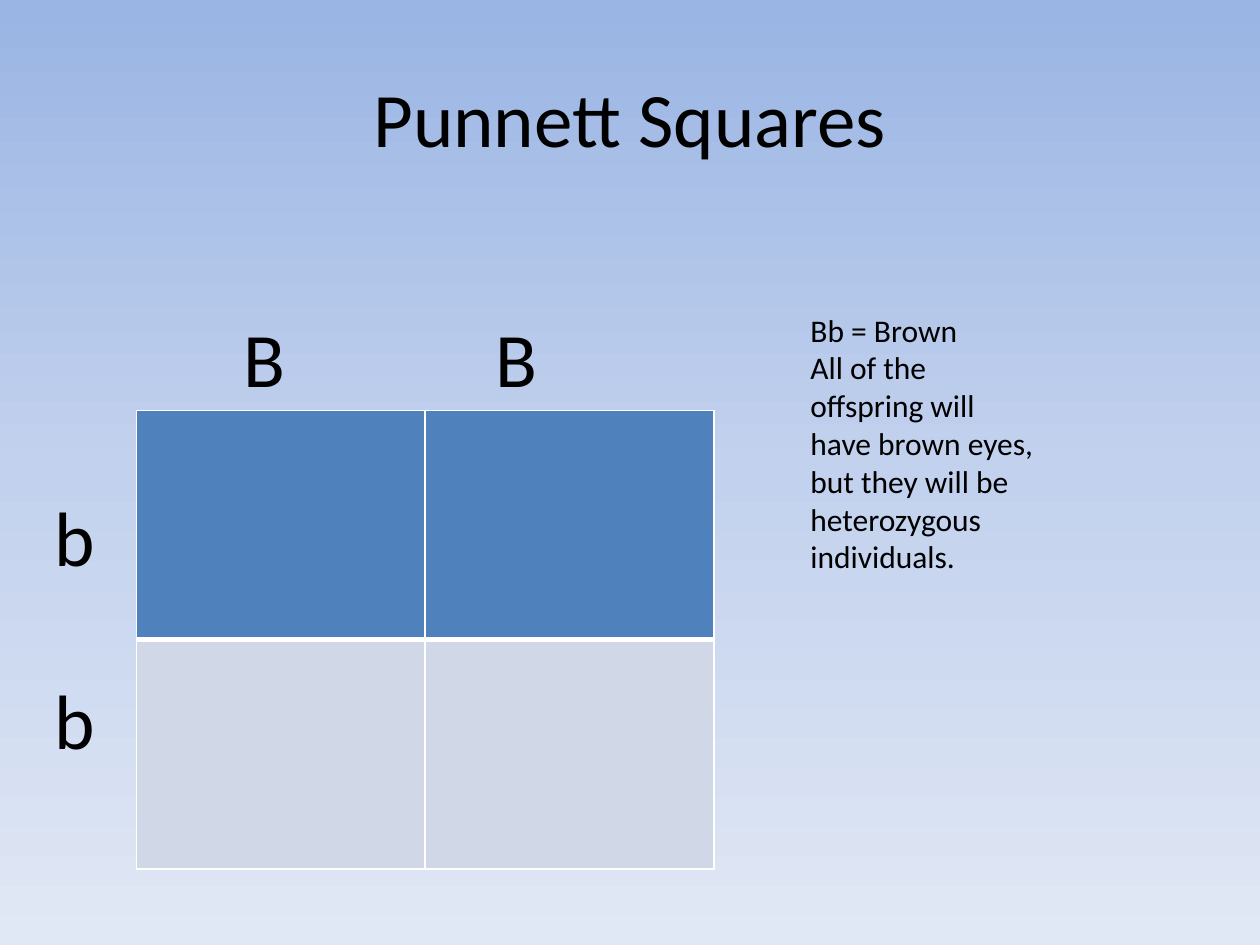
from copy import deepcopy
from typing import NamedTuple

from pptx import Presentation
from pptx.dml.color import RGBColor
from pptx.enum import text
from pptx.oxml import parse_xml
from pptx.oxml.ns import nsdecls, qn
from pptx.util import Pt

FONT = "Calibri"
BLACK, WHITE = "000000", "FFFFFF"
ROW_FILLS = ("4F81BD", "D0D8E8")
BACKGROUND = ((0, "9AB5E4"), (0.5, "C2D1ED"), (1, "E1E8F5"))


class Box(NamedTuple):
    left: float
    top: float
    width: float
    height: float


class Label(NamedTuple):
    box: Box
    lines: tuple[str, ...]
    size: float
    gap: float = 0
    tabs: tuple[float, ...] = ()


LABELS = (
    Label(Box(60, 174, 306, 60.5), ("\tB\t\tB",), 44, tabs=(72, 144, 216)),
    Label(Box(24, 276, 36, 242.5), ("b", "b"), 44, gap=52),
    Label(Box(456, 174, 234, 160),
          ("Bb = Brown", "All of the", "offspring will", "have brown eyes,",
           "but they will be", "heterozygous", "individuals."), 18),
)


def rgb(value: str) -> RGBColor:
    return RGBColor.from_string(value)


def points(box: Box) -> list[Pt]:
    return [Pt(v) for v in box]


def format_run(r, size: float) -> None:
    for name, value in {"name": FONT, "size": Pt(size)}.items():
        setattr(r.font, name, value)
    r.font.color.rgb = rgb(BLACK)


def paint_background(s) -> None:
    fill = s.background.fill
    fill.gradient()
    fill.gradient_angle = 270
    stop_list = s.element.find(".//" + qn("a:gsLst"))
    stop_list.append(deepcopy(stop_list[-1]))
    for stop, (position, color) in zip(fill.gradient_stops, BACKGROUND):
        stop.position = position
        stop.color.rgb = rgb(color)


def add_title(s, box: Box, title: str) -> None:
    sp = s.shapes.title
    for name, value in zip(("left", "top", "width", "height"), points(box)):
        setattr(sp, name, value)
    tf = sp.text_frame
    tf.vertical_anchor = text.MSO_ANCHOR.MIDDLE
    p = tf.paragraphs[0]
    p.alignment = text.PP_ALIGN.CENTER
    r = p.add_run()
    r.text = title
    format_run(r, 44)


def set_borders(cell, widths: dict[str, float]) -> None:
    """Draw white cell borders; they must precede the fill in the XML."""
    tc_pr = cell._tc.get_or_add_tcPr()
    for i, (side, width) in enumerate(widths.items()):
        tc_pr.insert(i, parse_xml(
            f'<a:{side} {nsdecls("a")} w="{Pt(width)}"><a:solidFill>'
            f'<a:srgbClr val="{WHITE}"/></a:solidFill></a:{side}>'))


def add_punnett_square(s, box: Box) -> None:
    table = s.shapes.add_table(2, 2, *points(box)).table
    for row, (tr, color) in enumerate(zip(table.rows, ROW_FILLS)):
        for cell in tr.cells:
            cell.fill.solid()
            cell.fill.fore_color.rgb = rgb(color)
            set_borders(cell, {"lnL": 1, "lnR": 1,
                               "lnT": 3 if row == 1 else 1,
                               "lnB": 3 if row == 0 else 1})


def set_tabs(p, tabs: tuple[float, ...]) -> None:
    stops = "".join(f'<a:tab pos="{Pt(t)}" algn="l"/>' for t in tabs)
    p._p.get_or_add_pPr().append(
        parse_xml(f'<a:tabLst {nsdecls("a")}>{stops}</a:tabLst>'))


def add_label(s, label: Label) -> None:
    tf = s.shapes.add_textbox(*points(label.box)).text_frame
    tf.word_wrap = True
    tf.auto_size = text.MSO_AUTO_SIZE.SHAPE_TO_FIT_TEXT
    for i, line in enumerate(label.lines):
        p = tf.add_paragraph() if i else tf.paragraphs[0]
        if i and label.gap:
            p.space_before = Pt(label.gap)
        if label.tabs:
            set_tabs(p, label.tabs)
        r = p.add_run()
        r.text = line
        format_run(r, label.size)


def main() -> None:
    prs = Presentation()
    prs.slide_width, prs.slide_height = Pt(720), Pt(540)
    s = prs.slides.add_slide(prs.slide_layouts[5])
    paint_background(s)
    add_title(s, Box(36, 21.6, 648, 90), "Punnett Squares")
    add_punnett_square(s, Box(78, 234.6, 330, 262))
    for label in LABELS:
        add_label(s, label)
    prs.save("out.pptx")


if __name__ == "__main__":
    main()
